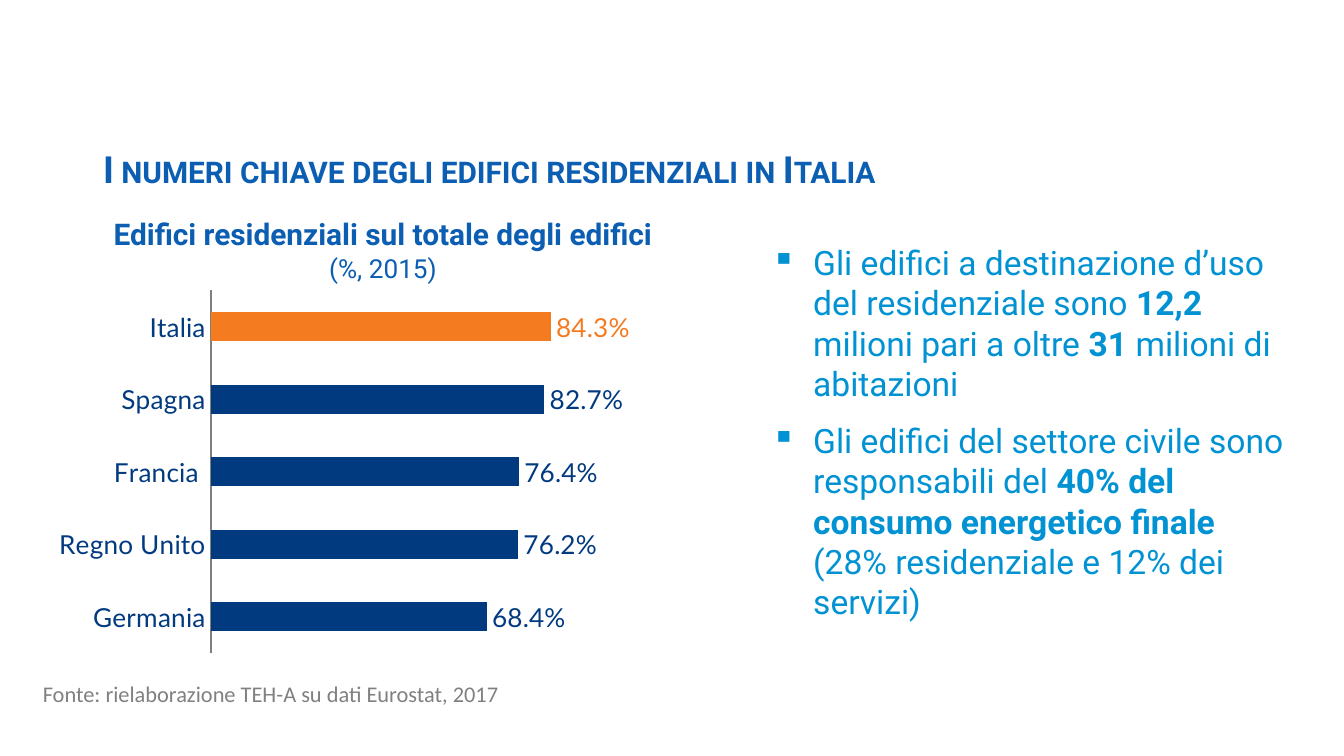
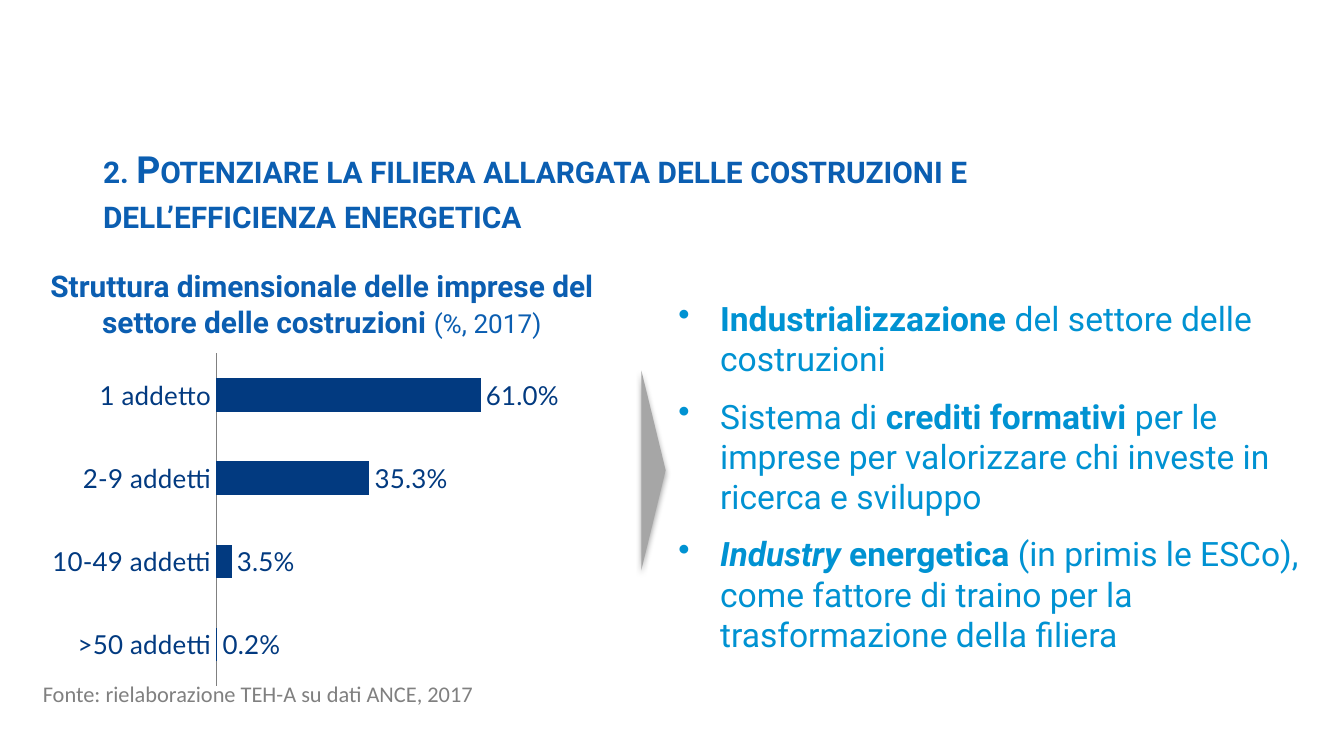
import pptx
import pptx.chart.data
import pptx.dml.color
import pptx.enum.chart
import pptx.enum.shapes
import pptx.enum.text
import pptx.oxml
import pptx.oxml.ns
import pptx.util
from lxml import etree

Cm = pptx.util.Cm
Pt = pptx.util.Pt
qn = pptx.oxml.ns.qn

TITLE_BLUE = "0B5EB1"
BULLET_BLUE = "0092D2"
BAR_BLUE = "023A80"
ORANGE = "F47B20"
SOURCE_GRAY = "808080"
ARROW_GRAY = "A6A6A6"

# Boxes are (left, top, width, height) in cm; runs are (text, style),
# where the style holds "b" for bold and "i" for italic.
SLIDES = [
    {
        "title": "I numeri chiave degli edifici residenziali in Italia",
        "title_height": 1.12,
        "heading_box": (1.22, 3.96, 12.04, 1.55),
        "heading": [
            [("Edifici residenziali sul totale degli edifici", "b")],
            [("(%, 2015)", "")],
        ],
        "chart_box": (0.56, 5.11, 12.7, 7.62),
        "plot_area": (0.27, 0.05, 0.54, 0.9),
        "axis_maximum": 0.9,
        "bars": [("Germania", 0.684), ("Regno Unito", 0.762), ("Francia ", 0.764),
                 ("Spagna", 0.827), ("Italia", 0.843)],
        "highlight": "Italia",
        "bullet_box": (14.33, 4.45, 10.34, 7.49),
        "bullet_mark": "▪",
        "bullets": [
            [("Gli edifici a destinazione d’uso del residenziale sono ", ""), ("12,2 ", "b"),
             ("milioni pari a oltre ", ""), ("31 ", "b"), ("milioni di abitazioni", "")],
            [("Gli edifici del settore civile sono responsabili del ", ""),
             ("40% del consumo energetico finale ", "b"),
             ("(28% residenziale e 12% dei servizi)", "")],
        ],
        "source": "Fonte: rielaborazione TEH-A su dati Eurostat, 2017",
    },
    {
        "title": "2. Potenziare la filiera allargata delle costruzioni e dell’efficienza energetica",
        "title_height": 1.96,
        "heading_box": (0.56, 4.93, 11.05, 1.63),
        "heading": [
            [("Struttura dimensionale delle imprese del settore delle costruzioni ", "b"),
             ("(%, 2017)", "")],
        ],
        "chart_box": (0.94, 6.55, 9.63, 6.55),
        "plot_area": (0.33, 0.02, 0.6, 0.96),
        "axis_maximum": 0.7,
        "bars": [(">50 addetti", 0.002), ("10-49 addetti", 0.035),
                 ("2-9 addetti", 0.353), ("1 addetto", 0.61)],
        "arrow_box": (10.46, 8.66, 3.78, 0.46),
        "bullet_box": (12.57, 5.51, 12.83, 8.15),
        "bullet_mark": "•",
        "bullets": [
            [("Industrializzazione", "b"), (" del settore delle costruzioni", "")],
            [("Sistema di ", ""), ("crediti formativi ", "b"),
             ("per le imprese per valorizzare chi investe in ricerca e sviluppo", "")],
            [("Industry", "bi"), (" energetica ", "b"),
             ("(in primis le ESCo), come fattore di traino per la trasformazione della filiera", "")],
        ],
        "source": "Fonte: rielaborazione TEH-A su dati ANCE, 2017",
    },
]


def rgb(value):
    return pptx.dml.color.RGBColor.from_string(value)


def lengths(box):
    return [Cm(value) for value in box]


def fill_solid(part, color):
    part.fill.solid()
    part.fill.fore_color.rgb = rgb(color)


def style_font(font, name, size, color):
    font.name = name
    font.size = Pt(size)
    font.color.rgb = rgb(color)


def add_text(slide, box, paragraphs, name, size, color, plain_size=None):
    """Add a text box; runs that are not bold take plain_size if it is given."""
    frame = slide.shapes.add_textbox(*lengths(box)).text_frame
    frame.word_wrap = True
    for index, runs in enumerate(paragraphs):
        paragraph = frame.add_paragraph() if index else frame.paragraphs[0]
        for text, style in runs:
            run = paragraph.add_run()
            run.text = text
            run_size = size if "b" in style else plain_size or size
            style_font(run.font, name, run_size, color)
            run.font.bold = "b" in style
            run.font.italic = "i" in style
    return frame


def add_title(slide, text, height):
    frame = add_text(slide, (1.7, 2.64, 21.08, height), [[(text, "b")]],
                     "Roboto", 20, TITLE_BLUE)
    frame.paragraphs[0].runs[0]._r.get_or_add_rPr().set("cap", "small")


def add_heading(slide, box, paragraphs):
    frame = add_text(slide, box, paragraphs, "Roboto", 16, TITLE_BLUE, plain_size=14)
    for paragraph in frame.paragraphs:
        paragraph.alignment = pptx.enum.text.PP_ALIGN.CENTER


def add_bullets(slide, box, paragraphs, mark):
    frame = add_text(slide, box, paragraphs, "Roboto", 18, BULLET_BLUE)
    for index, paragraph in enumerate(frame.paragraphs):
        properties = paragraph._p.get_or_add_pPr()
        properties.set("marL", str(Cm(0.79)))
        properties.set("indent", str(-Cm(0.79)))
        etree.SubElement(properties, qn("a:buChar")).set("char", mark)
        paragraph.space_before = Pt(6 if index else 0)
        paragraph.space_after = Pt(3)


def set_plot_area(chart, fractions):
    """Fix the inner plot area as fractions of the chart's size."""
    plot_area = chart._chartSpace.chart.plotArea
    for layout in plot_area.findall(qn("c:layout")):
        plot_area.remove(layout)
    layout = etree.Element(qn("c:layout"))
    manual = etree.SubElement(layout, qn("c:manualLayout"))
    settings = [("layoutTarget", "inner"), ("xMode", "edge"), ("yMode", "edge")]
    settings += zip("xywh", fractions)
    for tag, value in settings:
        etree.SubElement(manual, qn("c:" + tag)).set("val", str(value))
    plot_area.insert(0, layout)


def add_bar_chart(slide, content):
    categories, values = zip(*content["bars"])
    data = pptx.chart.data.CategoryChartData(number_format="0.0%")
    data.categories = categories
    data.add_series("Series 1", values)
    chart = slide.shapes.add_chart(pptx.enum.chart.XL_CHART_TYPE.BAR_CLUSTERED,
                                   *lengths(content["chart_box"]), data).chart
    style_font(chart.font, "Lato", 14, BAR_BLUE)
    chart.has_title = False
    chart.has_legend = False
    set_plot_area(chart, content["plot_area"])

    category_axis = chart.category_axis
    category_axis.major_tick_mark = pptx.enum.chart.XL_TICK_MARK.NONE
    category_axis.format.line.color.rgb = rgb(SOURCE_GRAY)
    style_font(category_axis.tick_labels.font, "Lato", 14, BAR_BLUE)
    value_axis = chart.value_axis
    value_axis.minimum_scale = 0
    value_axis.maximum_scale = content["axis_maximum"]
    value_axis.has_major_gridlines = False
    value_axis.visible = False

    plot = chart.plots[0]
    plot.gap_width = 150
    plot.overlap = -25
    plot.vary_by_categories = False
    series = plot.series[0]
    fill_solid(series.format, BAR_BLUE)
    outside = pptx.enum.chart.XL_LABEL_POSITION.OUTSIDE_END
    labels = series.data_labels
    labels.show_value = True
    labels.number_format = "0.0%"
    labels.number_format_is_linked = False
    labels.position = outside
    style_font(labels.font, "Lato", 14, BAR_BLUE)
    if "highlight" in content:
        point = series.points[categories.index(content["highlight"])]
        fill_solid(point.format, ORANGE)
        style_font(point.data_label.font, "Lato", 14, ORANGE)
        point.data_label.position = outside


def add_arrow(slide, box):
    """Add a flat triangle pointing right, with a soft shadow below."""
    arrow = slide.shapes.add_shape(pptx.enum.shapes.MSO_SHAPE.ISOSCELES_TRIANGLE, *lengths(box))
    arrow.rotation = 90
    fill_solid(arrow, ARROW_GRAY)
    arrow.line.fill.background()
    arrow.shadow.inherit = False
    effects = arrow._element.spPr.find(qn("a:effectLst"))
    shadow = etree.SubElement(effects, qn("a:outerShdw"), blurRad=str(Pt(3.1)),
                              dist=str(Pt(1.8)), dir="5400000", rotWithShape="0")
    color = etree.SubElement(shadow, qn("a:srgbClr"), val="000000")
    etree.SubElement(color, qn("a:alpha"), val="35000")


def main():
    presentation = pptx.Presentation()
    presentation.slide_width = Cm(25.4)
    presentation.slide_height = Cm(14.29)
    for content in SLIDES:
        slide = presentation.slides.add_slide(presentation.slide_layouts[6])
        add_title(slide, content["title"], content["title_height"])
        add_bar_chart(slide, content)
        add_heading(slide, content["heading_box"], content["heading"])
        add_text(slide, (0.56, 12.73, 14.78, 0.76), [[(content["source"], "")]],
                 "Calibri", 12, SOURCE_GRAY)
        if "arrow_box" in content:
            add_arrow(slide, content["arrow_box"])
        add_bullets(slide, content["bullet_box"], content["bullets"], content["bullet_mark"])
    presentation.save("out.pptx")


if __name__ == "__main__":
    main()
